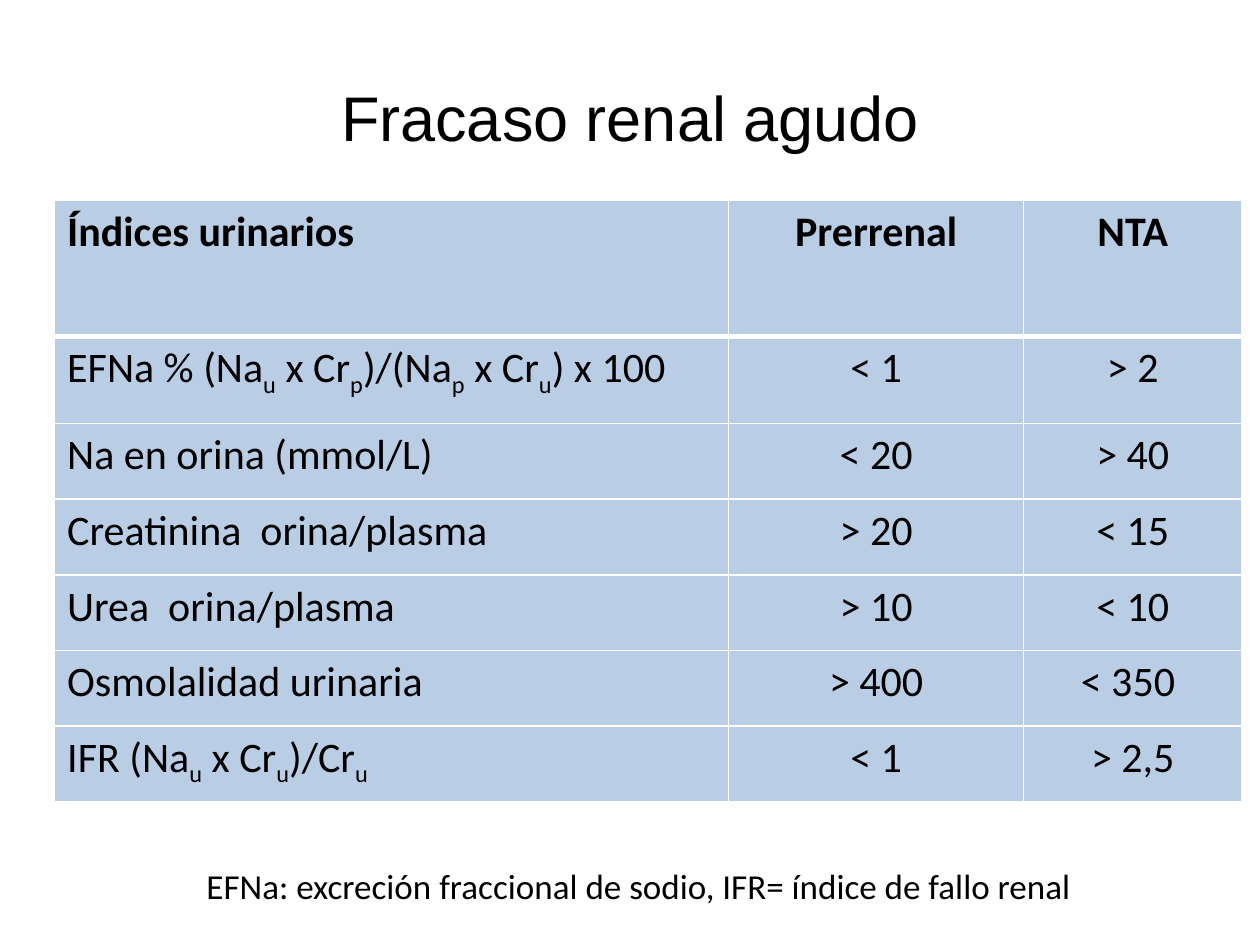
from lxml.etree import fromstring
from pptx import Presentation
from pptx.dml.color import RGBColor
from pptx.enum.text import MSO_ANCHOR, PP_ALIGN
from pptx.util import Pt

COLORS = {"text": "000000", "cell": "B9CDE5", "border": "FFFFFF"}
DRAWING_NS = "http://schemas.openxmlformats.org/drawingml/2006/main"
COL_WIDTHS = [385.2, 168.5, 124.8]
ROW_HEIGHTS = [77.8, 49.7] + [43.2] * 5
# Every second piece between bars is a subscript.
ROWS = [
    ("Índices urinarios", "Prerrenal", "NTA"),
    ("EFNa % (Na|u| x Cr|p|)/(Na|p| x Cr|u|) x 100", "< 1", "> 2"),
    ("Na en orina (mmol/L)", "< 20", "> 40"),
    ("Creatinina  orina/plasma", "> 20", "< 15"),
    ("Urea  orina/plasma", "> 10", "< 10"),
    ("Osmolalidad urinaria", "> 400", "< 350 "),
    ("IFR (Na|u| x Cr|u|)/Cr|u|", "< 1", "> 2,5"),
]


def write(p, text, font, size, bold=False, align=PP_ALIGN.LEFT):
    p.alignment = align
    p.font.name, p.font.size, p.font.bold = font, Pt(size), bold
    p.font.color.rgb = RGBColor.from_string(COLORS["text"])
    for i, piece in enumerate(text.split("|")):
        if piece:
            r = p.add_run()
            r.text = piece
            if i % 2:
                r.font._element.set("baseline", "-25000")


def add_text(slide, box, text, font, size, align=PP_ALIGN.LEFT,
             anchor=MSO_ANCHOR.TOP):
    tf = slide.shapes.add_textbox(*map(Pt, box)).text_frame
    tf.word_wrap = True
    tf.vertical_anchor = anchor
    write(tf.paragraphs[0], text, font, size, align=align)


def set_borders(cell, top, bottom):
    tc_pr = cell._tc.get_or_add_tcPr()
    for i, (side, width) in enumerate(
            [("L", 1), ("R", 1), ("T", top), ("B", bottom)]):
        tc_pr.insert(i, fromstring(
            f'<a:ln{side} xmlns:a="{DRAWING_NS}" w="{Pt(width)}"><a:solidFill>'
            f'<a:srgbClr val="{COLORS["border"]}"/></a:solidFill></a:ln{side}>'))


def add_index_table(slide, left, top):
    table = slide.shapes.add_table(
        len(ROWS), len(COL_WIDTHS), Pt(left), Pt(top),
        Pt(sum(COL_WIDTHS)), Pt(sum(ROW_HEIGHTS))).table
    for col, width in zip(table.columns, COL_WIDTHS):
        col.width = Pt(width)
    for row, height in zip(table.rows, ROW_HEIGHTS):
        row.height = Pt(height)
    for i, texts in enumerate(ROWS):
        for j, text in enumerate(texts):
            cell = table.cell(i, j)
            cell.fill.solid()
            cell.fill.fore_color.rgb = RGBColor.from_string(COLORS["cell"])
            set_borders(cell, 3 if i == 1 else 1, 3 if i == 0 else 1)
            write(cell.text_frame.paragraphs[0], text, "Calibri", 24, i == 0,
                  PP_ALIGN.CENTER if j else PP_ALIGN.LEFT)


def main():
    prs = Presentation()
    prs.slide_width, prs.slide_height = Pt(720), Pt(540)
    s = prs.slides.add_slide(prs.slide_layouts[6])
    add_text(s, (36, 21.6, 648, 90), "Fracaso renal agudo", "Arial", 36,
             PP_ALIGN.CENTER, MSO_ANCHOR.MIDDLE)
    add_index_table(s, 31.2, 114.6)
    add_text(s, (110.9, 490.3, 538.6, 31.7),
             "EFNa: excreción fraccional de sodio, IFR= índice de fallo renal",
             "Calibri", 20)
    prs.save("out.pptx")


if __name__ == "__main__":
    main()
